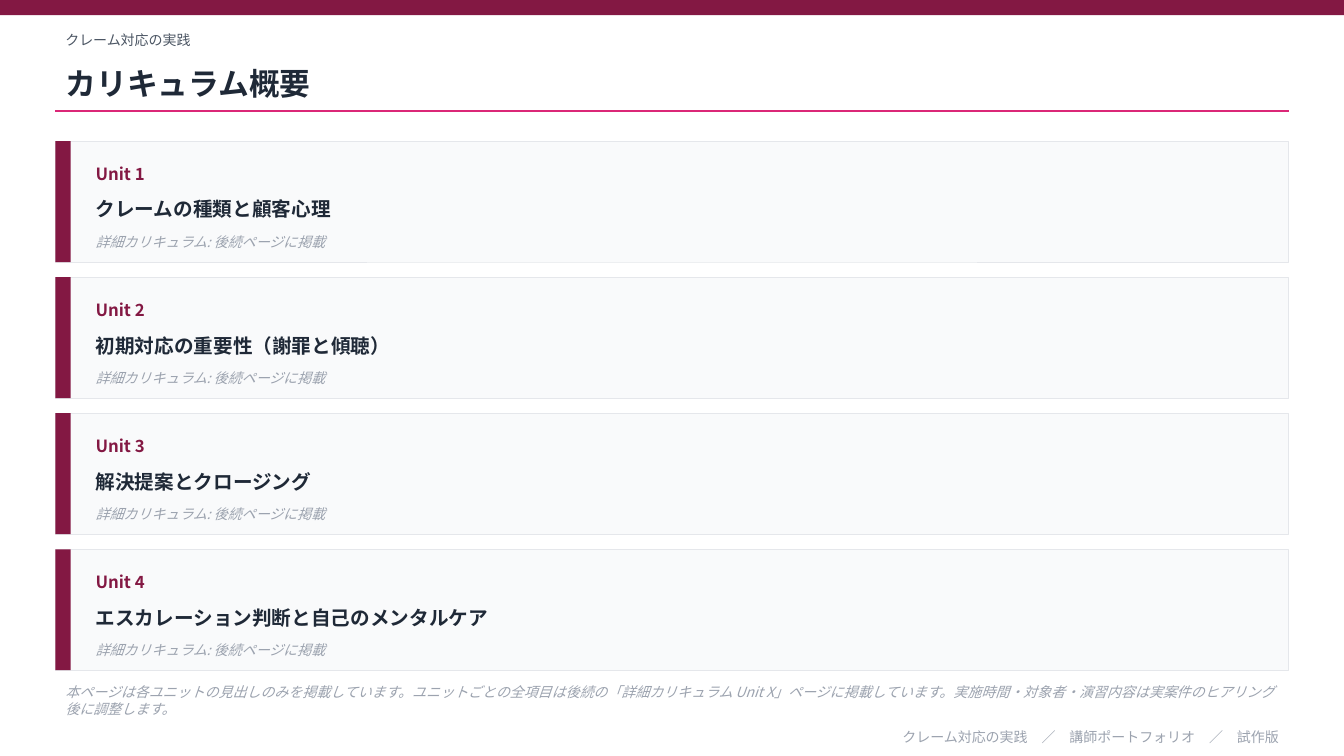
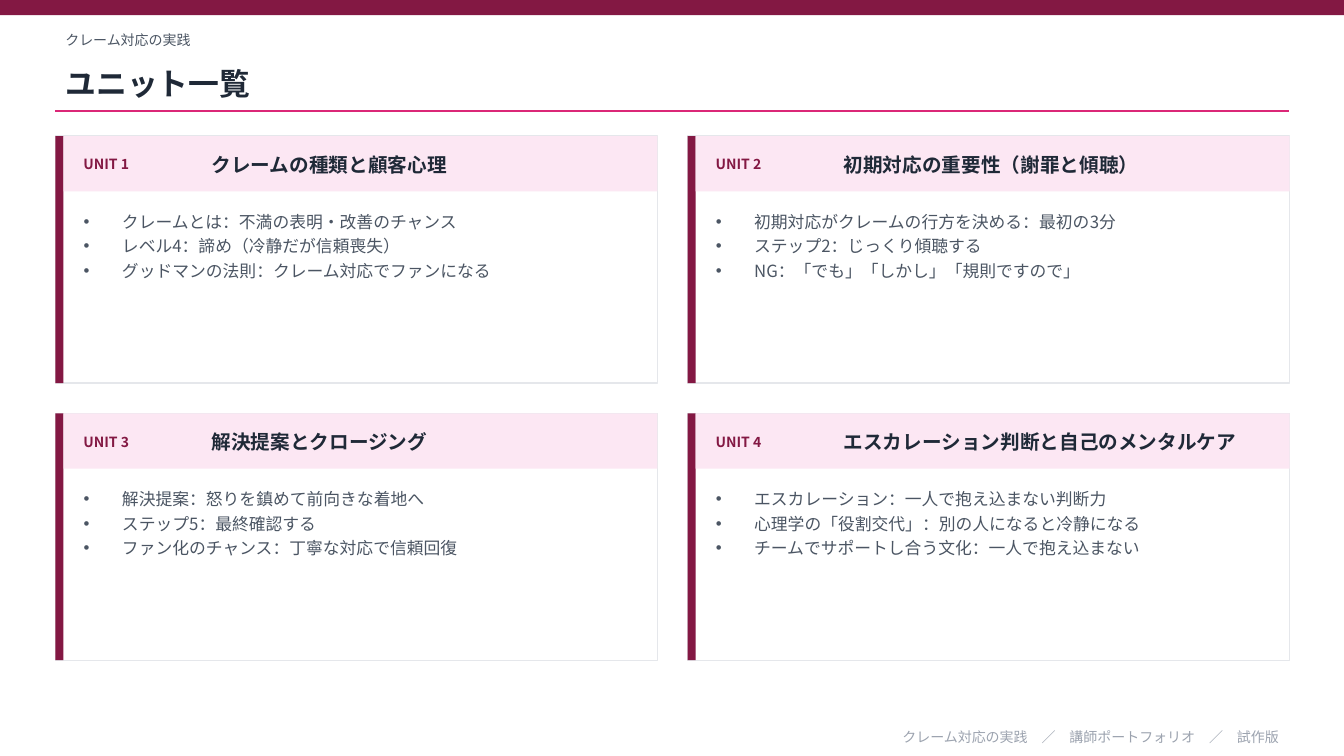
import pptx
import pptx.util
import pptx.dml.color
import pptx.enum.shapes
import pptx.enum.text
import pptx.oxml
import pptx.oxml.ns
from lxml import etree

Inches = pptx.util.Inches
Pt = pptx.util.Pt
RGBColor = pptx.dml.color.RGBColor
ALIGN = pptx.enum.text.PP_ALIGN
ANCHOR = pptx.enum.text.MSO_ANCHOR
qn = pptx.oxml.ns.qn

# Content
COURSE = "クレーム対応の実践"
FOOTER = "クレーム対応の実践　／　講師ポートフォリオ　／　試作版"
OVERVIEW_TITLE = "カリキュラム概要"
LIST_TITLE = "ユニット一覧"
DETAIL = "詳細カリキュラム: 後続ページに掲載"
NOTE = ("本ページは各ユニットの見出しのみを掲載しています。"
        "ユニットごとの全項目は後続の「詳細カリキュラム Unit X」ページに掲載しています。"
        "実施時間・対象者・演習内容は実案件のヒアリング後に調整します。")
UNITS = [
    ("クレームの種類と顧客心理", [
        "クレームとは：不満の表明・改善のチャンス",
        "レベル4：諦め（冷静だが信頼喪失）",
        "グッドマンの法則：クレーム対応でファンになる"]),
    ("初期対応の重要性（謝罪と傾聴）", [
        "初期対応がクレームの行方を決める：最初の3分",
        "ステップ2：じっくり傾聴する",
        "NG：「でも」「しかし」「規則ですので」"]),
    ("解決提案とクロージング", [
        "解決提案：怒りを鎮めて前向きな着地へ",
        "ステップ5：最終確認する",
        "ファン化のチャンス：丁寧な対応で信頼回復"]),
    ("エスカレーション判断と自己のメンタルケア", [
        "エスカレーション：一人で抱え込まない判断力",
        "心理学の「役割交代」：別の人になると冷静になる",
        "チームでサポートし合う文化：一人で抱え込まない"]),
]

# Shared style
FONT = "Noto Sans CJK JP"
WINE = RGBColor(0x83, 0x18, 0x43)
PINK = RGBColor(0xDB, 0x27, 0x77)
PALE_PINK = RGBColor(0xFC, 0xE7, 0xF3)
INK = RGBColor(0x1F, 0x29, 0x37)
SLATE = RGBColor(0x4B, 0x55, 0x63)
MUTED = RGBColor(0x9C, 0xA3, 0xAF)
BORDER = RGBColor(0xE5, 0xE7, 0xEB)
PANEL = RGBColor(0xF9, 0xFA, 0xFB)
WHITE = RGBColor(0xFF, 0xFF, 0xFF)

SLIDE_WIDTH, SLIDE_HEIGHT = 13.33, 7.5
MARGIN = 0.55
CONTENT_WIDTH = 12.23
TITLE_ONLY, FOUR_BODIES = 5, 4


def place(shape, left, top, width, height):
    shape.left, shape.top = Inches(left), Inches(top)
    shape.width, shape.height = Inches(width), Inches(height)


def write(shape, *lines, size=10, color=INK, bold=False, italic=False,
          align=ALIGN.LEFT, anchor=ANCHOR.MIDDLE, bullet=False):
    """Fill a text box or placeholder with formatted paragraphs."""
    frame = shape.text_frame
    frame.word_wrap = True
    frame.auto_size = pptx.enum.text.MSO_AUTO_SIZE.NONE
    frame.vertical_anchor = anchor
    frame.text = "\n".join(lines)
    if bullet:
        for element in shape.element.iter(qn("a:p")):
            properties = element.get_or_add_pPr()
            properties.set("marL", str(Inches(0.38)))
            properties.set("indent", str(Inches(-0.38)))
            etree.SubElement(properties, qn("a:buChar")).set("char", "•")
    for paragraph in frame.paragraphs:
        paragraph.alignment = align
        paragraph.space_before = Pt(0)
        paragraph.space_after = Pt(3 if bullet else 0)
        for run in paragraph.runs:
            font = run.font
            font.name, font.size = FONT, Pt(size)
            font.bold, font.italic = bold, italic
            font.color.rgb = color
    for properties in shape.element.iter(qn("a:rPr")):
        etree.SubElement(properties, qn("a:ea")).set("typeface", FONT)


def add_text(slide, box, text, **style):
    shape = slide.shapes.add_textbox(*map(Inches, box))
    write(shape, text, **style)


def add_box(slide, box, fill, border=None, border_width=1):
    shape = slide.shapes.add_shape(
        pptx.enum.shapes.MSO_SHAPE.RECTANGLE, *map(Inches, box))
    shape.shadow.inherit = False
    shape.fill.solid()
    shape.fill.fore_color.rgb = fill
    if border is None:
        shape.line.fill.background()
    else:
        shape.line.color.rgb = border
        shape.line.width = Pt(border_width)


def add_base_slide(presentation, layout, title):
    """Add a slide with the top band, course name, title, rule and footer."""
    slide = presentation.slides.add_slide(presentation.slide_layouts[layout])
    add_box(slide, (0, 0, SLIDE_WIDTH, 0.15), WINE)
    add_text(slide, (MARGIN, 0.25, CONTENT_WIDTH, 0.3), COURSE, color=SLATE)
    place(slide.shapes.title, MARGIN, 0.55, CONTENT_WIDTH, 0.55)
    write(slide.shapes.title, title, size=22, bold=True)
    rule = slide.shapes.add_connector(
        pptx.enum.shapes.MSO_CONNECTOR.STRAIGHT, Inches(MARGIN), Inches(1.1),
        Inches(MARGIN + CONTENT_WIDTH), Inches(1.1))
    rule.line.color.rgb = PINK
    rule.line.width = Pt(1)
    etree.SubElement(rule.element.spPr, qn("a:effectLst"))
    add_text(slide, (MARGIN, 7.2, CONTENT_WIDTH, 0.22), FOOTER,
             color=MUTED, align=ALIGN.RIGHT)
    return slide


def build_overview(presentation):
    slide = add_base_slide(presentation, TITLE_ONLY, OVERVIEW_TITLE)
    row_height, row_gap = 1.2, 0.15
    text_left, text_width = MARGIN + 0.3, CONTENT_WIDTH - 0.5
    for index, (name, _) in enumerate(UNITS):
        top = 1.4 + index * (row_height + row_gap)
        add_box(slide, (MARGIN, top, CONTENT_WIDTH, row_height), PANEL, BORDER, 0.5)
        add_box(slide, (MARGIN, top, 0.15, row_height), WINE)
        add_text(slide, (text_left, top + 0.12, 1.5, 0.4), f"Unit {index + 1}",
                 size=12, color=WINE, bold=True)
        add_text(slide, (text_left, top + 0.45, text_width, 0.45), name,
                 size=14, bold=True)
        add_text(slide, (text_left, top + 0.85, text_width, 0.3), DETAIL,
                 color=MUTED, italic=True)
    add_text(slide, (MARGIN, 6.75, CONTENT_WIDTH, 0.4), NOTE,
             color=MUTED, italic=True)


def build_unit_list(presentation):
    slide = add_base_slide(presentation, FOUR_BODIES, LIST_TITLE)
    bodies = [shape for shape in slide.placeholders
              if shape.placeholder_format.idx != 0]
    card_width, card_height, gap, accent = 5.97, 2.45, 0.3, 0.08
    for index, ((name, points), body) in enumerate(zip(UNITS, bodies)):
        row, column = divmod(index, 2)
        left = MARGIN + column * (card_width + gap)
        top = 1.35 + row * (card_height + gap)
        add_box(slide, (left, top, card_width, card_height), WHITE, BORDER)
        add_box(slide, (left, top, accent, card_height), WINE)
        add_box(slide, (left + accent, top, card_width - accent, 0.55), PALE_PINK)
        add_text(slide, (left + 0.18, top + 0.08, 1.2, 0.4), f"UNIT {index + 1}",
                 color=WINE, bold=True)
        add_text(slide, (left + 1.45, top + 0.08, 4.37, 0.4), name,
                 size=14, bold=True)
        # Bring the list in front of its card
        body.element.getparent().append(body.element)
        place(body, left + 0.18, top + 0.7, 5.61, 1.6)
        write(body, *points, size=12, color=SLATE, anchor=ANCHOR.TOP, bullet=True)


def main():
    presentation = pptx.Presentation()
    presentation.slide_width = Inches(SLIDE_WIDTH)
    presentation.slide_height = Inches(SLIDE_HEIGHT)
    build_overview(presentation)
    build_unit_list(presentation)
    presentation.save("out.pptx")


if __name__ == "__main__":
    main()
